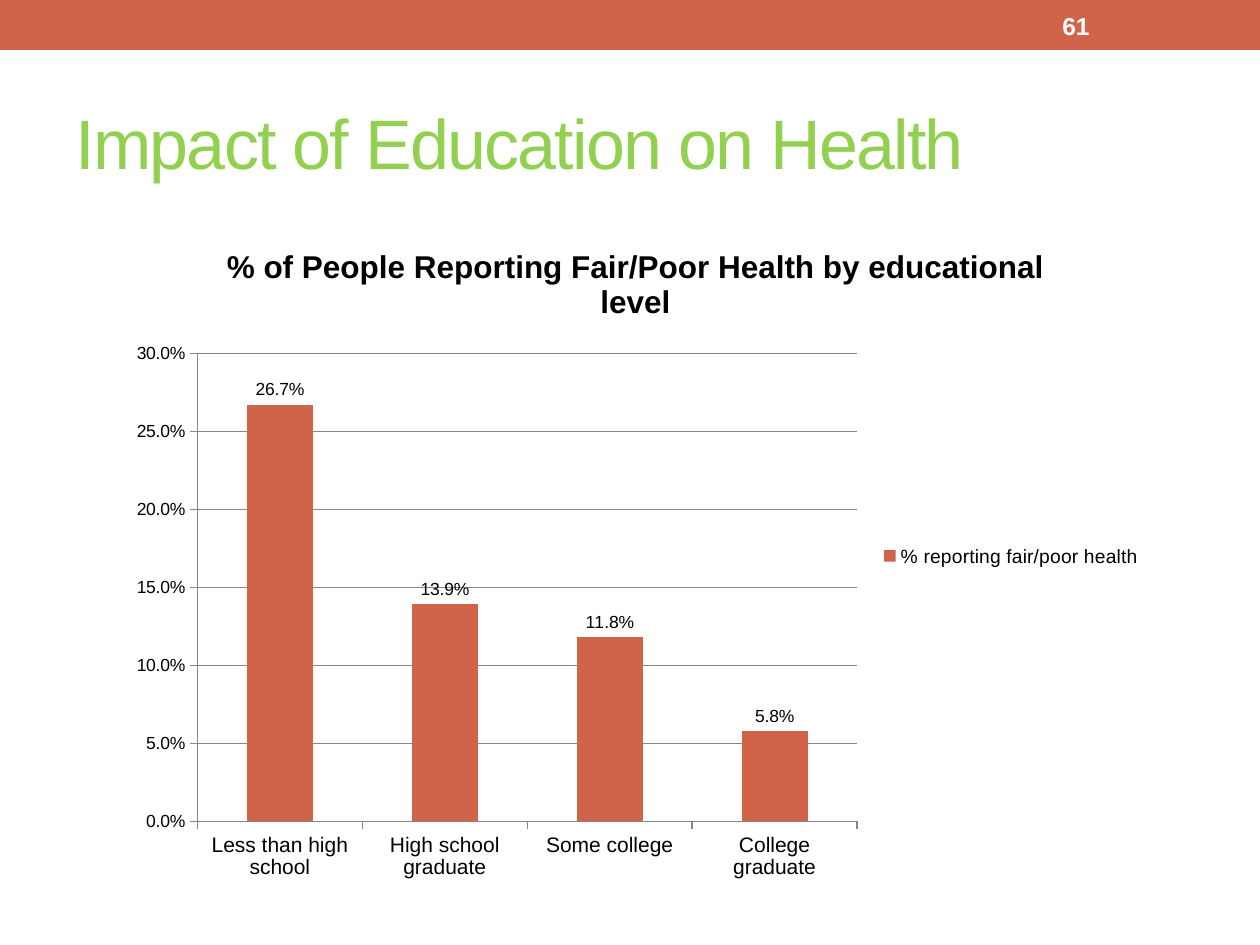
import pptx
import pptx.util
import pptx.chart.data
import pptx.dml.color
import pptx.enum.chart
import pptx.enum.shapes
import pptx.enum.text

PX = 914400 // 126
HUES = {"rust": "D16349", "lime": "92D050", "white": "FFFFFF",
        "black": "000000", "gray": "868686"}


class Deck:
    face = "Arial"

    def __init__(self, wide, high):
        self.prs = pptx.Presentation()
        self.prs.slide_width = self.emu(wide)
        self.prs.slide_height = self.emu(high)
        self.slide = self.prs.slides.add_slide(self.prs.slide_layouts[5])

    def emu(self, px):
        return pptx.util.Emu(px * PX)

    def box(self, *nums):
        return [self.emu(n) for n in nums]

    def hue(self, name):
        return pptx.dml.color.RGBColor.from_string(HUES[name])

    def style(self, font, size, hue, bold=False):
        font.name = self.face
        font.size = pptx.util.Pt(size)
        font.bold = bold
        font.color.rgb = self.hue(hue)

    def label(self, shape, text, size, hue, bold=False):
        frame = shape.text_frame
        frame.text = text
        frame.word_wrap = True
        frame.auto_size = pptx.enum.text.MSO_AUTO_SIZE.NONE
        frame.vertical_anchor = pptx.enum.text.MSO_ANCHOR.MIDDLE
        para = frame.paragraphs[0]
        para.alignment = pptx.enum.text.PP_ALIGN.LEFT
        run = para.runs[0]
        self.style(run.font, size, hue, bold)
        return run

    def title(self, text, size, hue, *place):
        shape = self.slide.shapes.title
        shape.left, shape.top, shape.width, shape.height = self.box(*place)
        run = self.label(shape, text, size, hue)
        run.font._element.set("spc", "-100")

    def text(self, text, size, hue, bold, *place):
        shape = self.slide.shapes.add_textbox(*self.box(*place))
        self.label(shape, text, size, hue, bold)

    def band(self, hue, *place):
        kind = pptx.enum.shapes.MSO_SHAPE.RECTANGLE
        shape = self.slide.shapes.add_shape(kind, *self.box(*place))
        shape.shadow.inherit = False
        shape.fill.solid()
        shape.fill.fore_color.rgb = self.hue(hue)
        shape.line.fill.background()

    def axis(self, axis, size):
        self.style(axis.tick_labels.font, size, "black")
        axis.major_tick_mark = pptx.enum.chart.XL_TICK_MARK.OUTSIDE
        axis.format.line.color.rgb = self.hue("gray")

    def chart(self, head, name, rows, hue, form, *place):
        data = pptx.chart.data.CategoryChartData(number_format=form)
        data.categories = list(rows)
        data.add_series(name, list(rows.values()))
        kind = pptx.enum.chart.XL_CHART_TYPE.COLUMN_CLUSTERED
        chart = self.slide.shapes.add_chart(kind, *self.box(*place), data).chart
        self.style(chart.font, 10, "black")

        chart.has_title = True
        frame = chart.chart_title.text_frame
        frame.text = head
        self.style(frame.paragraphs[0].runs[0].font, 18, "black", True)
        chart.chart_title.include_in_layout = False

        chart.has_legend = True
        chart.legend.position = pptx.enum.chart.XL_LEGEND_POSITION.RIGHT
        chart.legend.include_in_layout = False
        self.style(chart.legend.font, 11, "black")

        self.axis(chart.category_axis, 12)
        axis = chart.value_axis
        self.axis(axis, 10)
        axis.minimum_scale, axis.maximum_scale, axis.major_unit = 0, 0.3, 0.05
        axis.tick_labels.number_format = form
        axis.tick_labels.number_format_is_linked = False
        axis.has_major_gridlines = True
        axis.major_gridlines.format.line.color.rgb = self.hue("gray")

        plot = chart.plots[0]
        plot.gap_width = 150
        plot.vary_by_categories = False
        bars = plot.series[0]
        bars.format.fill.solid()
        bars.format.fill.fore_color.rgb = self.hue(hue)
        tags = bars.data_labels
        tags.show_value = True
        tags.number_format = form
        tags.number_format_is_linked = False
        tags.position = pptx.enum.chart.XL_LABEL_POSITION.OUTSIDE_END
        self.style(tags.font, 10, "black")


def main():
    deck = Deck(1260, 945)
    deck.band("rust", 0, 0, 1260, 50)
    deck.title("Impact of Education on Health", 40, "lime", 63, 73, 1134, 136)
    deck.text("61", 14, "white", True, 1050, 3, 147, 45)
    rates = {"Less than high school": 0.267, "High school graduate": 0.139,
             "Some college": 0.118, "College graduate": 0.058}
    deck.chart("% of People Reporting Fair/Poor Health by educational level",
               "% reporting fair/poor health", rates, "rust", "0.0%",
               116, 220, 1039, 672)
    deck.prs.save("out.pptx")


if __name__ == "__main__":
    main()
